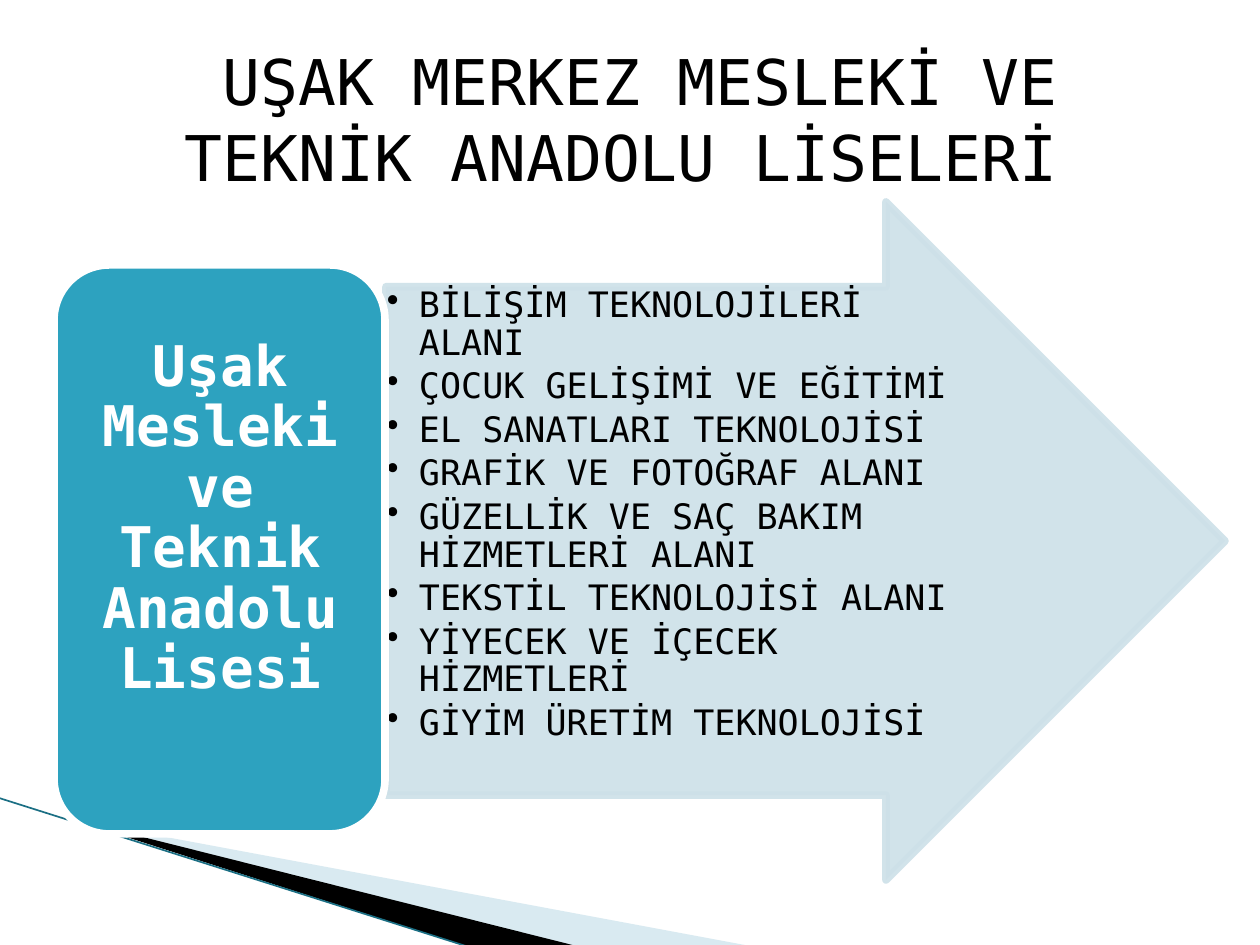
from lxml.etree import SubElement
from pptx import Presentation
from pptx.dml.color import RGBColor
from pptx.enum.shapes import MSO_CONNECTOR as Connector, MSO_SHAPE as Shape
from pptx.enum.text import MSO_ANCHOR as Anchor, PP_ALIGN as Align
from pptx.oxml.ns import qn
from pptx.util import Emu, Pt

SCALE = 914400 / 126  # EMU in one px
FONT = "DejaVu Sans Mono"
COLORS = {
    "black": "000000",
    "white": "FFFFFF",
    "teal": "2DA2BF",
    "arrow": "CDE0E8",
    "wedge": "A0CBDC",
    "edge": "1B6F84",
}
TITLE = " UŞAK MERKEZ MESLEKİ VE TEKNİK ANADOLU LİSELERİ"
SCHOOL = "Uşak Mesleki ve Teknik Anadolu Lisesi"
FIELDS = [
    "BİLİŞİM TEKNOLOJİLERİ ALANI",
    "ÇOCUK GELİŞİMİ VE EĞİTİMİ",
    "EL SANATLARI TEKNOLOJİSİ",
    "GRAFİK VE FOTOĞRAF ALANI",
    "GÜZELLİK VE SAÇ BAKIM HİZMETLERİ ALANI",
    "TEKSTİL TEKNOLOJİSİ ALANI",
    "YİYECEK VE İÇECEK HİZMETLERİ",
    "GİYİM ÜRETİM TEKNOLOJİSİ",
]


def px(value):
    return Emu(round(value * SCALE))


def paint(fill, color, opacity=100):
    fill.solid()
    fill.fore_color.rgb = RGBColor.from_string(COLORS[color])
    if opacity < 100:
        color_node = fill._xPr.find(qn("a:solidFill"))[0]
        SubElement(color_node, qn("a:alpha"), val=str(opacity * 1000))


def add_wedge(page, points, color, opacity=100):
    builder = page.shapes.build_freeform(*points[0], scale=SCALE)
    builder.add_line_segments(points[1:], close=True)
    wedge = builder.convert_to_shape()
    wedge.shadow.inherit = False
    paint(wedge.fill, color, opacity)
    wedge.line.fill.background()


def add_edge(page, start, end, color):
    edge = page.shapes.add_connector(
        Connector.STRAIGHT, *map(px, start), *map(px, end))
    edge.line.width = Pt(0.95)
    paint(edge.line.fill, color)
    SubElement(edge._element.spPr, qn("a:effectLst"))


def add_block(page, kind, at, fill, line, opacity=100):
    block = page.shapes.add_shape(kind, *map(px, at))
    block.shadow.inherit = False
    paint(block.fill, fill, opacity)
    block.line.width = Pt(4.33)
    paint(block.line.fill, line, opacity)
    return block


def add_bullet(para, indent):
    props = para._p.get_or_add_pPr()
    props.set("marL", str(px(indent)))
    props.set("indent", str(-px(indent)))
    SubElement(props, qn("a:buChar"), char="•")


def add_text(page, at, lines, size, color="black", bold=False, align=Align.LEFT,
             anchor=Anchor.TOP, insets=(13, 6, 13, 6), spacing=1, after=0, indent=0):
    box = page.shapes.add_textbox(*map(px, at))
    frame = box.text_frame
    frame.word_wrap = True
    frame.vertical_anchor = anchor
    (frame.margin_left, frame.margin_top,
     frame.margin_right, frame.margin_bottom) = map(px, insets)
    for index, line in enumerate(lines):
        para = frame.add_paragraph() if index else frame.paragraphs[0]
        if indent:
            add_bullet(para, indent)
        para.alignment = align
        para.line_spacing = spacing
        para.space_after = Pt(after)
        span = para.add_run()
        span.text = line
        span.font.name = FONT
        span.font.size = Pt(size)
        span.font.bold = bold
        span.font.color.rgb = RGBColor.from_string(COLORS[color])


def main():
    deck = Presentation()
    deck.slide_width, deck.slide_height = px(1260), px(945)
    page = deck.slides.add_slide(deck.slide_layouts[6])

    # Corner decoration
    add_wedge(page, [(69, 819), (750, 946), (575, 946)], "wedge", 40)
    add_wedge(page, [(67, 818), (576, 946), (469, 947)], "black")
    add_edge(page, (-1, 798), (469, 947), "edge")

    # Arrow with the fields of study
    arrow = add_block(page, Shape.RIGHT_ARROW, (386, 202, 839, 678),
                      "arrow", "arrow", 90)
    arrow.adjustments[0] = 0.75
    arrow.adjustments[1] = 0.5
    add_text(page, (386, 286, 585, 509), FIELDS, 20, insets=(1, 1, 1, 1),
             spacing=0.9, after=3.3, indent=32)

    # School name, set a line above the middle
    add_block(page, Shape.ROUNDED_RECTANGLE, (54, 265, 331, 569), "teal", "white")
    add_text(page, (71, 281, 299, 537), [SCHOOL], 32, "white", True, Align.CENTER,
             Anchor.MIDDLE, (16, 9, 16, 69), spacing=0.9)

    # Title
    add_text(page, (95, 37, 1052, 165), [TITLE], 36, align=Align.CENTER)

    deck.save("out.pptx")


if __name__ == "__main__":
    main()
